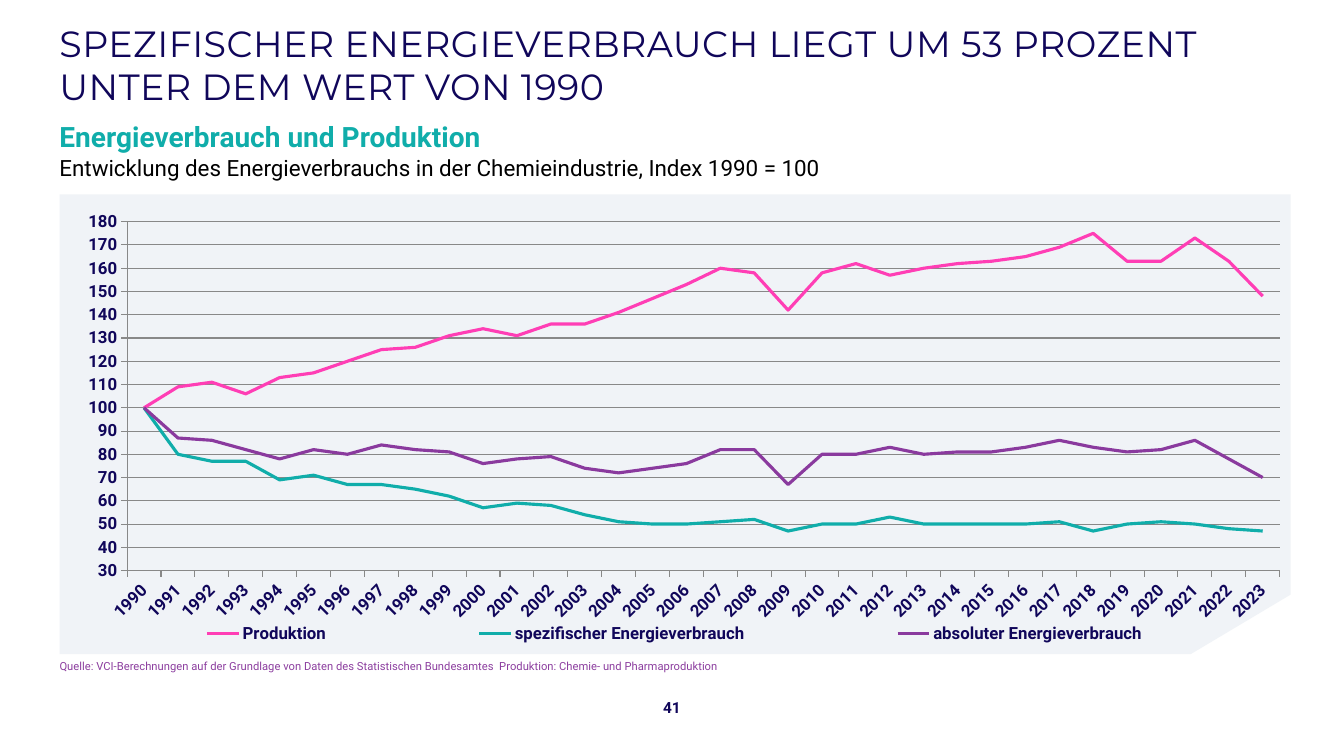
"""Build the slide on specific energy consumption in the chemical industry."""
from lxml.etree import SubElement
from pptx import Presentation
from pptx.chart.data import CategoryChartData
from pptx.dml.color import RGBColor
from pptx.enum.chart import XL_CHART_TYPE, XL_LEGEND_POSITION, XL_MARKER_STYLE, XL_TICK_MARK
from pptx.enum.text import MSO_ANCHOR, PP_ALIGN
from pptx.oxml.ns import qn
from pptx.util import Inches, Pt

NAVY = RGBColor(0x10, 0x06, 0x5A)
TEAL = RGBColor(0x10, 0xAD, 0xAA)
PINK = RGBColor(0xFF, 0x3E, 0xB5)
PURPLE = RGBColor(0x8A, 0x3A, 0x9E)
SOURCE_PURPLE = RGBColor(0x8C, 0x3E, 0x9F)
BLACK = RGBColor(0, 0, 0)
GREY = RGBColor(0x88, 0x88, 0x88)
PANEL_FILL = RGBColor(0xF0, 0xF3, 0xF7)

TITLE = "SPEZIFISCHER ENERGIEVERBRAUCH LIEGT UM 53 PROZENT UNTER DEM WERT VON 1990"
HEADING = "Energieverbrauch und Produktion"
SUBHEADING = "Entwicklung des Energieverbrauchs in der Chemieindustrie, Index 1990 = 100"
SOURCE = ("Quelle: VCI-Berechnungen auf der Grundlage von Daten des Statistischen "
          "Bundesamtes  Produktion: Chemie- und Pharmaproduktion")
PAGE_NUMBER = "41"

YEARS = [str(year) for year in range(1990, 2024)]
INDEX_SERIES = [
    ("Produktion", PINK,
     [100, 109, 111, 106, 113, 115, 120, 125, 126, 131, 134, 131, 136, 136, 141, 147, 153,
      160, 158, 142, 158, 162, 157, 160, 162, 163, 165, 169, 175, 163, 163, 173, 163, 148]),
    ("spezifischer Energieverbrauch", TEAL,
     [100, 80, 77, 77, 69, 71, 67, 67, 65, 62, 57, 59, 58, 54, 51, 50, 50,
      51, 52, 47, 50, 50, 53, 50, 50, 50, 50, 51, 47, 50, 51, 50, 48, 47]),
    ("absoluter Energieverbrauch", PURPLE,
     [100, 87, 86, 82, 78, 82, 80, 84, 82, 81, 76, 78, 79, 74, 72, 74, 76,
      82, 82, 67, 80, 80, 83, 80, 81, 81, 83, 86, 83, 81, 82, 86, 78, 70]),
]

LEFT, WIDTH = 0.59, 12.2
PANEL_CORNERS = [(0.59, 1.93), (12.8, 1.93), (12.8, 5.9), (11.81, 6.49), (0.59, 6.49)]
PLOT_AREA = {"x": 0.055, "y": 0.034, "w": 0.937, "h": 0.785}
LEGEND_AREA = {"x": 0, "y": 0.925, "w": 1, "h": 0.07}


def add_panel(slide):
    corners = [(Inches(x), Inches(y)) for x, y in PANEL_CORNERS]
    outline = slide.shapes.build_freeform(*corners[0])
    outline.add_line_segments(corners[1:], close=True)
    panel = outline.convert_to_shape()
    panel.shadow.inherit = False
    panel.fill.solid()
    panel.fill.fore_color.rgb = PANEL_FILL
    panel.line.fill.background()


def add_text(slide, text, box, size, color, bold=False, typeface="Roboto",
             anchor=MSO_ANCHOR.TOP, align=PP_ALIGN.LEFT, inset=0):
    frame = slide.shapes.add_textbox(*map(Inches, box)).text_frame
    frame.word_wrap = True
    frame.vertical_anchor = anchor
    frame.margin_left = frame.margin_right = 0
    frame.margin_top = frame.margin_bottom = Inches(inset)
    paragraph = frame.paragraphs[0]
    paragraph.alignment = align
    run = paragraph.add_run()
    run.text = text
    style_font(run.font, size, color, bold, typeface)
    return run


def style_font(font, size, color, bold, typeface="Roboto"):
    font.size = Pt(size)
    font.color.rgb = color
    font.bold = bold
    font.name = typeface


def style_line(line, color, width):
    line.color.rgb = color
    line.width = Pt(width)


def set_layout(layout, area, inner=False):
    for child in list(layout):
        layout.remove(child)
    manual = SubElement(layout, qn("c:manualLayout"))
    if inner:
        SubElement(manual, qn("c:layoutTarget")).set("val", "inner")
    for mode in ("xMode", "yMode"):
        SubElement(manual, qn(f"c:{mode}")).set("val", "edge")
    for key, share in area.items():
        SubElement(manual, qn(f"c:{key}")).set("val", str(share))


def add_index_chart(slide):
    chart_data = CategoryChartData(number_format="0")
    chart_data.categories = YEARS
    for name, _, values in INDEX_SERIES:
        chart_data.add_series(name, values)
    box = map(Inches, (LEFT, 2.05, WIDTH, 4.41))
    chart = slide.shapes.add_chart(XL_CHART_TYPE.LINE, *box, chart_data).chart
    chart.has_title = False
    style_font(chart.font, 12, NAVY, True)
    chart.plots[0].vary_by_categories = False

    for series, (_, color, _) in zip(chart.plots[0].series, INDEX_SERIES):
        series.smooth = False
        series.marker.style = XL_MARKER_STYLE.NONE
        style_line(series.format.line, color, 2.25)

    years, index = chart.category_axis, chart.value_axis
    for axis in (years, index):
        axis.major_tick_mark = XL_TICK_MARK.OUTSIDE
        axis.minor_tick_mark = XL_TICK_MARK.NONE
        style_line(axis.format.line, GREY, 0.75)
        style_font(axis.tick_labels.font, 12, NAVY, True)
    years.has_major_gridlines = False
    years_body = years._element.find(qn("c:txPr")).find(qn("a:bodyPr"))
    years_body.set("rot", "-2700000")
    index.minimum_scale, index.maximum_scale, index.major_unit = 30, 180, 10
    index.tick_labels.number_format = "0"
    index.tick_labels.number_format_is_linked = False
    index.has_major_gridlines = True
    style_line(index.major_gridlines.format.line, GREY, 0.75)

    chart.has_legend = True
    legend = chart.legend
    legend.position = XL_LEGEND_POSITION.BOTTOM
    legend.include_in_layout = False
    style_font(legend.font, 12, NAVY, True)

    plot_area = chart._chartSpace.chart.plotArea
    plot_layout = plot_area.find(qn("c:layout"))
    if plot_layout is None:
        plot_layout = SubElement(plot_area, qn("c:layout"))
        plot_area.insert(0, plot_layout)
    set_layout(plot_layout, PLOT_AREA, inner=True)
    legend_layout = legend._element.find(qn("c:layout"))
    if legend_layout is None:
        legend_layout = SubElement(legend._element, qn("c:layout"))
        legend._element.find(qn("c:legendPos")).addnext(legend_layout)
    set_layout(legend_layout, LEGEND_AREA)


def main():
    deck = Presentation()
    deck.slide_width, deck.slide_height = Inches(13.33), Inches(7.5)
    slide = deck.slides.add_slide(deck.slide_layouts[6])
    add_panel(slide)
    title = add_text(slide, TITLE, (LEFT, 0.15, WIDTH, 0.98), 26, NAVY,
                     typeface="Montserrat", anchor=MSO_ANCHOR.MIDDLE, inset=0.04)
    title.font._element.set("spc", "30")
    add_text(slide, HEADING, (LEFT, 1.19, WIDTH, 0.31), 20, TEAL, bold=True)
    add_text(slide, SUBHEADING, (LEFT, 1.53, WIDTH, 0.28), 16, BLACK)
    add_index_chart(slide)
    add_text(slide, SOURCE, (LEFT, 6.54, 11.02, 0.13), 8, SOURCE_PURPLE)
    add_text(slide, PAGE_NUMBER, (6.37, 6.88, 0.59, 0.28), 11, NAVY, bold=True,
             anchor=MSO_ANCHOR.MIDDLE, align=PP_ALIGN.CENTER)
    deck.save("out.pptx")


if __name__ == "__main__":
    main()
